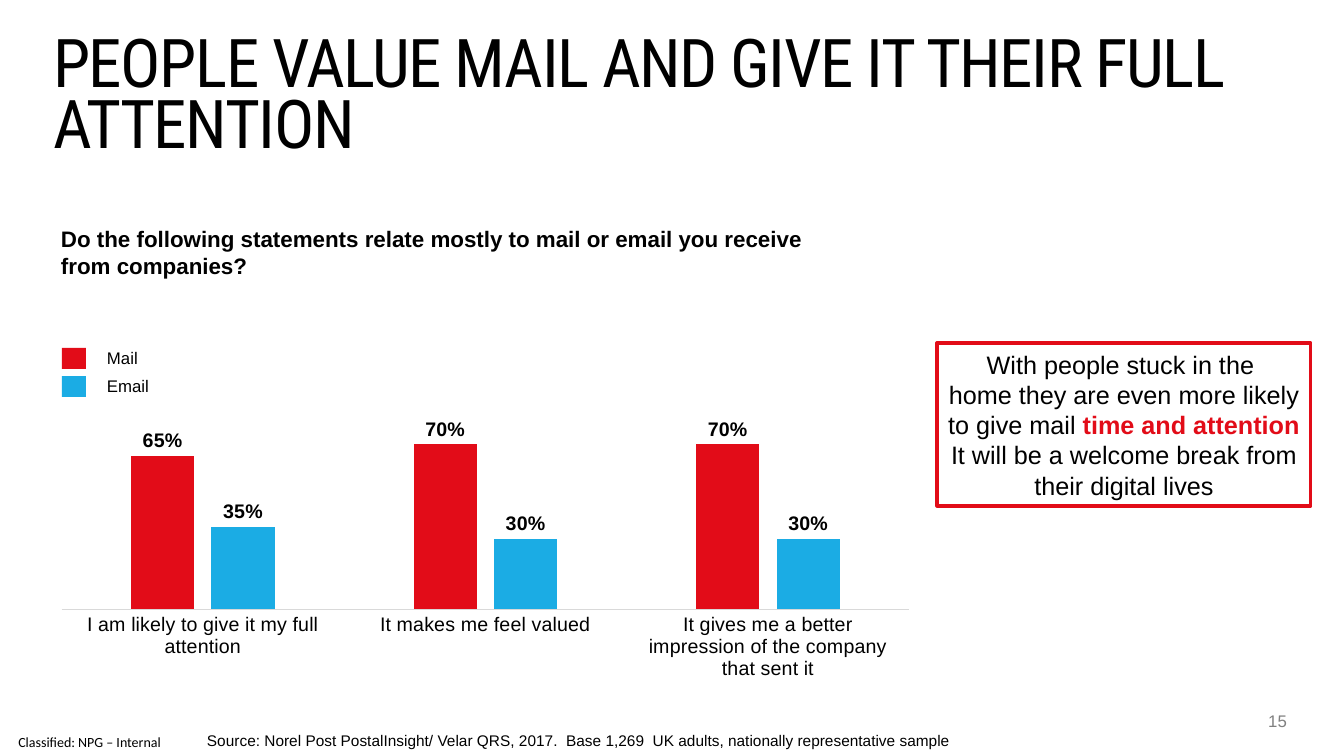
from lxml import etree
from pptx import Presentation
from pptx.chart.data import CategoryChartData
from pptx.dml.color import RGBColor
from pptx.enum.chart import XL_CHART_TYPE, XL_LABEL_POSITION, XL_TICK_MARK
from pptx.enum.shapes import MSO_SHAPE
from pptx.enum.text import MSO_ANCHOR, MSO_AUTO_SIZE, PP_ALIGN
from pptx.oxml.ns import qn
from pptx.util import Pt

LEFT, MID, RIGHT = PP_ALIGN.LEFT, PP_ALIGN.CENTER, PP_ALIGN.RIGHT
TOP, CENTER = MSO_ANCHOR.TOP, MSO_ANCHOR.MIDDLE
FIT, FIXED = MSO_AUTO_SIZE.SHAPE_TO_FIT_TEXT, MSO_AUTO_SIZE.NONE
RECT = MSO_SHAPE.RECTANGLE
COLUMN = XL_CHART_TYPE.COLUMN_CLUSTERED
OUTSIDE = XL_LABEL_POSITION.OUTSIDE_END
NO_TICK = XL_TICK_MARK.NONE

# Content
BLACK, GREY, RULE = "000000", "808080", "D9D9D9"
RED, BLUE = "E20C18", "1BACE4"
TITLE = "PEOPLE VALUE MAIL AND GIVE IT THEIR FULL ATTENTION"
NOTES = [
    {"box": (0, 727, 179, 29), "text": "Classified: NPG – Internal", "size": 10,
     "name": "Calibri", "align": MID, "anchor": CENTER, "fit": FIT},
    {"box": (1240, 711, 47, 20), "text": "15", "size": 12, "color": GREY,
     "align": RIGHT},
    {"box": (53, 221, 796, 62), "size": 16, "bold": True, "pad": (8, 4),
     "fit": FIT, "text": "Do the following statements relate mostly to mail "
     "or email you receive from companies?"},
    {"box": (198, 727, 777, 27), "size": 11, "pad": (9, 4), "wrap": False,
     "fit": FIT, "text": "Source: Norel Post PostalInsight/ Velar QRS, 2017.  "
     "Base 1,269  UK adults, nationally representative sample"},
]
CATS = ["I am likely to give it my full attention", "It makes me feel valued",
        "It gives me a better impression of the company that sent it"]
SERIES = [("Mail", RED, (0.65, 0.7, 0.7)), ("Email", BLUE, (0.35, 0.3, 0.3))]
# Callout paragraphs: (text, color, bold) runs
CALLOUT = [
    [("With people stuck in the \nhome they are even more likely\nto give mail ",
      BLACK, False), ("time and attention", RED, True)],
    [("It will be a welcome break from\ntheir digital lives", BLACK, False)],
]
PLOT = {"x": 0.02, "y": 0.02, "w": 0.96, "h": 0.75}


def px(n):
    return round(n * 914400 / 100.8)


def rgb(code):
    return RGBColor.from_string(code)


def style(font, size, color=BLACK, bold=False, name="Arial"):
    for key, val in {"size": Pt(size), "bold": bold, "name": name}.items():
        setattr(font, key, val)
    font.color.rgb = rgb(color)


def frame(shape, pad=(10, 5), wrap=True, anchor=TOP, fit=FIXED):
    text = shape.text_frame
    form = {"margin_left": px(pad[0]), "margin_right": px(pad[0]),
            "margin_top": px(pad[1]), "margin_bottom": px(pad[1]),
            "word_wrap": wrap, "vertical_anchor": anchor, "auto_size": fit}
    for key, val in form.items():
        setattr(text, key, val)
    return text


def label(box, text, size, color=BLACK, bold=False, name="Arial", align=LEFT,
          pad=(0, 0), **form):
    shape = slide.shapes.add_textbox(*map(px, box))
    para = frame(shape, pad, **form).paragraphs[0]
    para.alignment = align
    run = para.add_run()
    run.text = text
    style(run.font, size, color, bold, name)
    return para


def block(box):
    shape = slide.shapes.add_shape(RECT, *map(px, box))
    shape.shadow.inherit = False
    return shape


deck = Presentation()
deck.slide_width, deck.slide_height = px(1344), px(756)
slide = deck.slides.add_slide(deck.slide_layouts[6])

# Title and notes
head = label((53, 39, 1276, 56), TITLE, 48, name="Roboto Condensed")
head.line_spacing = Pt(44)
head.runs[0].font._element.set("spc", "-100")
for note in NOTES:
    label(**note)

# Chart
data = CategoryChartData(number_format="0%")
data.categories = CATS
for name, color, vals in SERIES:
    data.add_series(name, vals)
chart = slide.shapes.add_chart(COLUMN, *map(px, (44, 343, 883, 346)), data).chart
chart.has_legend = chart.has_title = False
style(chart.font, 10)
plot = chart.plots[0]
for key, val in {"gap_width": 219, "overlap": -27,
                 "vary_by_categories": False}.items():
    setattr(plot, key, val)
for part, (name, color, vals) in zip(plot.series, SERIES):
    part.format.fill.solid()
    part.format.fill.fore_color.rgb = rgb(color)
    tags = part.data_labels
    for key, val in {"show_value": True, "position": OUTSIDE,
                     "number_format": "0%",
                     "number_format_is_linked": False}.items():
        setattr(tags, key, val)
    style(tags.font, 14, bold=True)

# Axes
cat, val_axis = chart.category_axis, chart.value_axis
cat.major_tick_mark = cat.minor_tick_mark = NO_TICK
cat.format.line.color.rgb = rgb(RULE)
cat.format.line.width = Pt(0.75)
style(cat.tick_labels.font, 14)
for key, val in {"minimum_scale": 0, "maximum_scale": 1.1, "major_unit": 0.2,
                 "has_major_gridlines": False, "visible": False}.items():
    setattr(val_axis, key, val)

# Fixed plot area
area = chart._chartSpace.find(".//" + qn("c:plotArea"))
for old in area.findall(qn("c:layout")):
    area.remove(old)
layout = etree.Element(qn("c:layout"))
manual = etree.SubElement(layout, qn("c:manualLayout"))
rules = {"layoutTarget": "inner", "xMode": "edge", "yMode": "edge", **PLOT}
for key, val in rules.items():
    etree.SubElement(manual, qn("c:" + key)).set("val", str(val))
area.insert(0, layout)

# Callout
call = block((937, 343, 374, 163))
call.fill.background()
call.line.color.rgb = rgb(RED)
call.line.width = Pt(2.25)
text = frame(call, wrap=False, anchor=CENTER, fit=FIT)
for i, runs in enumerate(CALLOUT):
    para = text.add_paragraph() if i else text.paragraphs[0]
    para.alignment = MID
    for words, color, bold in runs:
        for j, line in enumerate(words.split("\n")):
            if j:
                para.add_line_break()
            run = para.add_run()
            run.text = line
            style(run.font, 18, color, bold)

# Legend
for i, (name, color, vals) in enumerate(SERIES):
    y = 343 + 28 * i
    key = block((62, y + 5, 24, 21))
    key.fill.solid()
    key.fill.fore_color.rgb = rgb(color)
    key.line.fill.background()
    label((97, y, 118, 30), name, 12, pad=(10, 5), fit=FIT)

deck.save("out.pptx")
